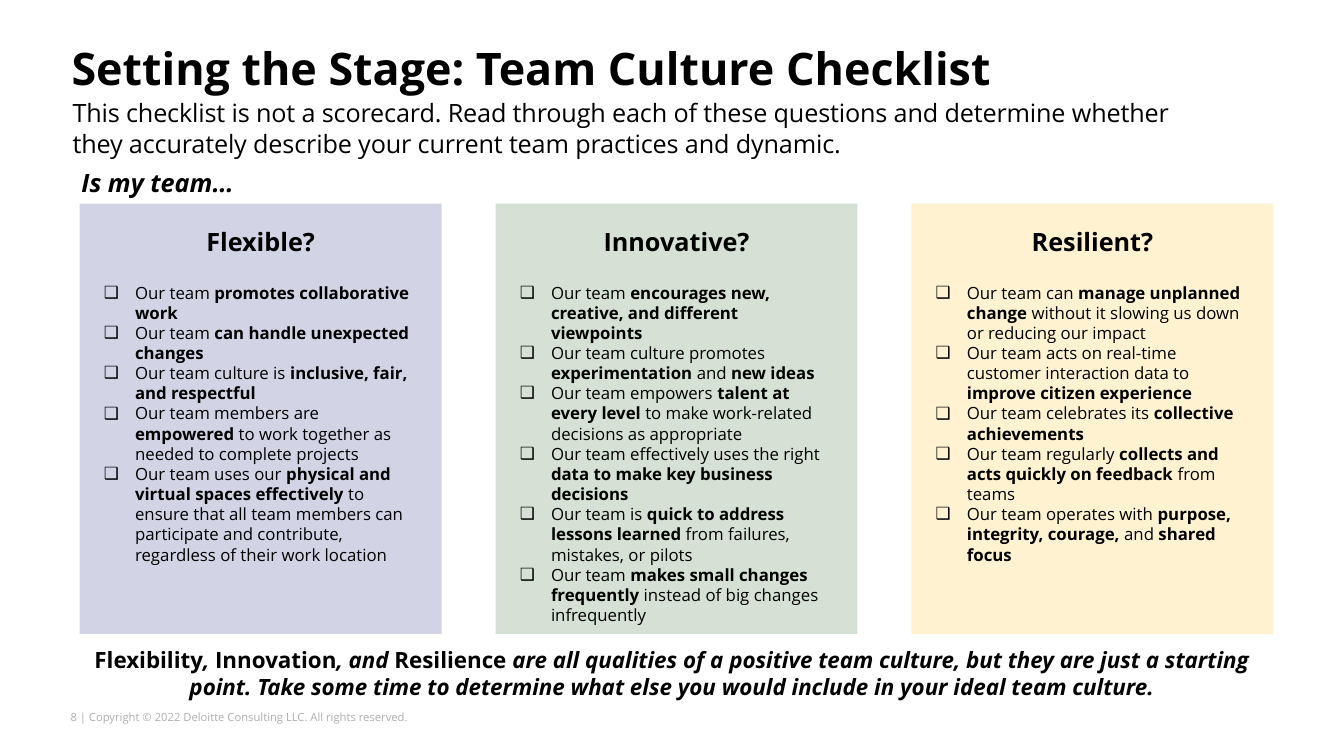
import lxml.etree
import pptx
import pptx.dml.color
import pptx.enum.shapes
import pptx.enum.text
import pptx.oxml.ns
import pptx.util

Inches = pptx.util.Inches
Pt = pptx.util.Pt
Align = pptx.enum.text.PP_ALIGN
Anchor = pptx.enum.text.MSO_ANCHOR
qn = pptx.oxml.ns.qn

FONT = "Open Sans"
BLACK = "000000"
LEFT = 0.71
CARDS_LEFT, CARDS_RIGHT, CARDS_TOP = 0.79, 12.63, 2.02
CARD_WIDTH, CARD_HEIGHT = 3.59, 4.27
CARD_OPACITY = 18

# Text between asterisks is emphasised.
CHECKLISTS = [
    ("Flexible?", "0B1677", [
        "Our team *promotes collaborative work*",
        "Our team *can handle unexpected changes*",
        "Our team culture is *inclusive, fair, and respectful*",
        "Our team members are *empowered* to work together as needed to complete projects",
        "Our team uses our *physical and virtual spaces effectively* to ensure that all team "
        "members can participate and contribute, regardless of their work location",
    ]),
    ("Innovative?", "1B5D13", [
        "Our team *encourages new, creative, and different viewpoints*",
        "Our team culture promotes *experimentation* and *new ideas*",
        "Our team empowers *talent at every level *to make work-related decisions as appropriate",
        "Our team effectively uses the right *data to make key business decisions*",
        "Our team is *quick to address lessons learned *from failures, mistakes, or pilots",
        "Our team *makes small changes frequently *instead of big changes infrequently",
    ]),
    ("Resilient?", "FABB01", [
        "Our team can *manage unplanned change *without it slowing us down or reducing our impact",
        "Our team acts on real-time customer interaction data to *improve citizen experience*",
        "Our team celebrates its *collective achievements*",
        "Our team regularly *collects and acts quickly on feedback* from teams",
        "Our team operates with *purpose, integrity, courage, *and* shared focus*",
    ]),
]


def rgb(hex_color):
    return pptx.dml.color.RGBColor.from_string(hex_color)


def place(shape, left, top, width, height):
    shape.left, shape.top = Inches(left), Inches(top)
    shape.width, shape.height = Inches(width), Inches(height)


def prepare(frame, inset_x=0.1, inset_y=0.05, anchor=Anchor.TOP):
    frame.word_wrap = True
    frame.auto_size = pptx.enum.text.MSO_AUTO_SIZE.NONE
    frame.vertical_anchor = anchor
    frame.margin_left = frame.margin_right = Inches(inset_x)
    frame.margin_top = frame.margin_bottom = Inches(inset_y)
    return frame


def style(run, size, bold=False, italic=False, color=BLACK):
    font = run.font
    font.name, font.size, font.bold, font.italic = FONT, Pt(size), bold, italic
    font.color.rgb = rgb(color)


def write_line(frame, text, size, align=Align.LEFT, **look):
    line = frame.paragraphs[0]
    line.text = text
    line.alignment = align
    line.space_before = Pt(0)
    style(line.runs[0], size, **look)
    return line


def add_marked_runs(paragraph, text):
    """Add one run per part of the text and yield it with its emphasis."""
    for index, part in enumerate(text.split("*")):
        if part:
            run = paragraph.add_run()
            run.text = part
            yield run, index % 2 == 1


def set_bullet(paragraph, char=None, indent=0.0, hanging=0.0):
    properties = paragraph._p.get_or_add_pPr()
    properties.set("marL", str(Inches(indent)))
    properties.set("indent", str(-Inches(hanging)))
    if char:
        lxml.etree.SubElement(properties, qn("a:buChar")).set("char", char)
    else:
        lxml.etree.SubElement(properties, qn("a:buNone"))


def add_text_box(slide, left, top, width, height, **layout):
    box = slide.shapes.add_textbox(Inches(left), Inches(top), Inches(width), Inches(height))
    return prepare(box.text_frame, **layout)


def build_header(slide, title, intro):
    place(title, LEFT, 0.46, 11.17, 0.65)
    heading = write_line(prepare(title.text_frame, 0, 0),
                         "Setting the Stage: Team Culture Checklist", 32, bold=True)
    heading.line_spacing = 0.9

    place(intro, LEFT, 0.97, 11.44, 0.61)
    advice = write_line(
        prepare(intro.text_frame, 0, 0),
        "This checklist is not a scorecard. Read through each of these questions and determine "
        "whether they accurately describe your current team practices and dynamic.", 18)
    set_bullet(advice, indent=0.01)
    advice.runs[0].font._element.set("spc", "-10")

    lead_in = add_text_box(slide, LEFT, 1.61, 1.9, 0.4)
    write_line(lead_in, "Is my team…", 18, bold=True, italic=True)


def build_card(slide, checklist, left, top, heading, color, questions):
    card = slide.shapes.add_shape(pptx.enum.shapes.MSO_SHAPE.RECTANGLE, Inches(left), Inches(top),
                                  Inches(CARD_WIDTH), Inches(CARD_HEIGHT))
    card.shadow.inherit = False
    card.line.fill.background()
    card.fill.solid()
    card.fill.fore_color.rgb = rgb(color)
    tint = card.element.spPr.find(".//" + qn("a:srgbClr"))
    lxml.etree.SubElement(tint, qn("a:alpha")).set("val", str(CARD_OPACITY * 1000))
    # The card goes behind the placeholder that holds its checklist.
    card.element.getparent().insert(2, card.element)

    title = add_text_box(slide, left, top + 0.18, CARD_WIDTH, 0.4)
    write_line(title, heading, 18, Align.CENTER, bold=True)

    place(checklist, left + 0.14, top + 0.73, CARD_WIDTH - 0.28, CARD_HEIGHT - 0.74)
    frame = prepare(checklist.text_frame)
    for index, question in enumerate(questions):
        item = frame.paragraphs[0] if index == 0 else frame.add_paragraph()
        item.space_before = Pt(0)
        item.alignment = Align.LEFT
        set_bullet(item, "❑", 0.31, 0.31)
        for run, strong in add_marked_runs(item, question):
            style(run, 12, bold=strong)


def build_closing(slide):
    frame = add_text_box(slide, 0.68, 6.37, 11.97, 0.62, inset_y=0.1, anchor=Anchor.MIDDLE)
    message = frame.paragraphs[0]
    message.alignment = Align.CENTER
    text = ("Flexibility*, *Innovation*, and *Resilience* are all qualities of a positive team "
            "culture, but they are just a starting point. Take some time to determine what else "
            "you would include in your ideal team culture.*")
    for run, slanted in add_marked_runs(message, text):
        style(run, 16, bold=True, italic=slanted)

    footer = add_text_box(slide, 0.7, 7.05, 3.6, 0.13, inset_x=0, inset_y=0)
    write_line(footer, "8 | Copyright © 2022 Deloitte Consulting LLC. All rights reserved.", 8,
               color="AEAEAE")


def main():
    deck = pptx.Presentation()
    deck.slide_width, deck.slide_height = Inches(13.33), Inches(7.5)
    comparison_layout = deck.slide_layouts[4]
    slide = deck.slides.add_slide(comparison_layout)
    title, intro, *checklists = slide.placeholders

    build_header(slide, title, intro)
    pitch = (CARDS_RIGHT - CARDS_LEFT - CARD_WIDTH) / (len(CHECKLISTS) - 1)
    for column, (checklist, content) in enumerate(zip(checklists, CHECKLISTS)):
        build_card(slide, checklist, CARDS_LEFT + column * pitch, CARDS_TOP, *content)
    build_closing(slide)
    deck.save("out.pptx")


if __name__ == "__main__":
    main()
